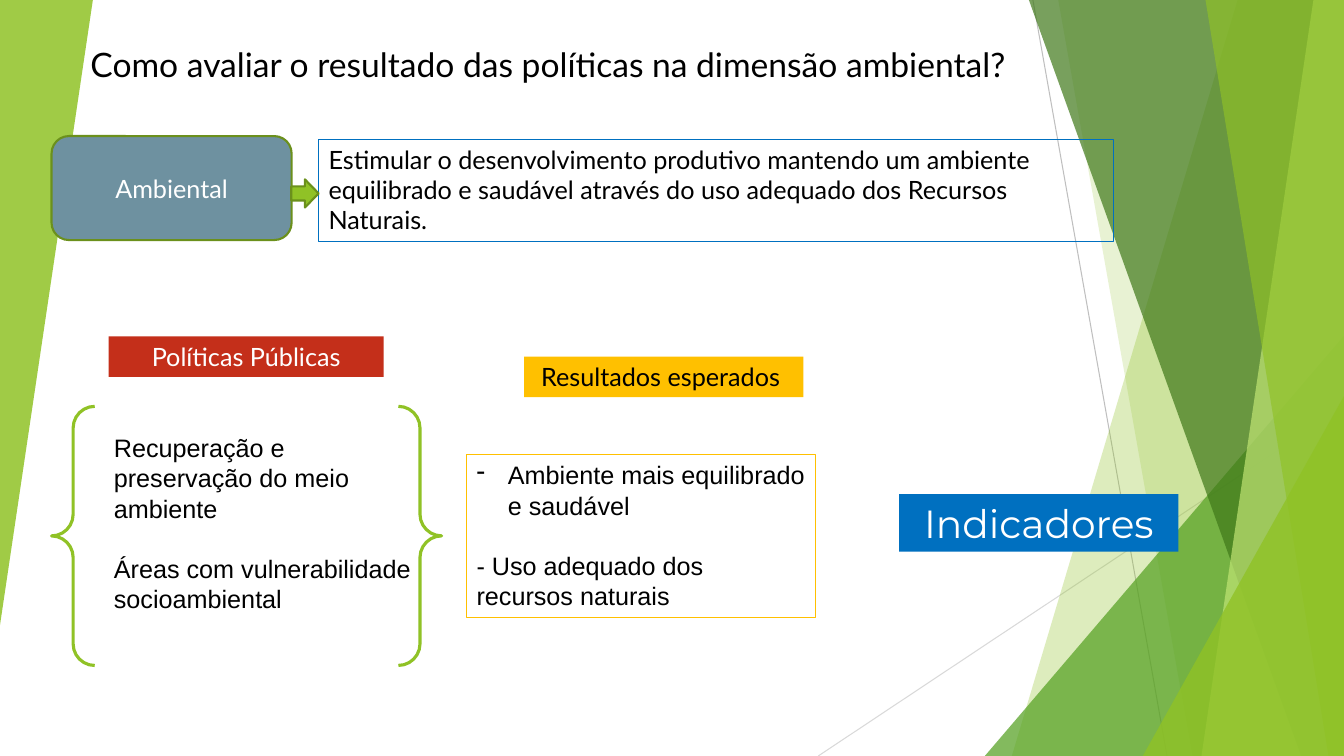
from dataclasses import dataclass

from lxml.etree import SubElement
from pptx import Presentation
from pptx.dml.color import RGBColor
from pptx.enum.shapes import MSO_CONNECTOR, MSO_SHAPE as SHAPE
from pptx.enum.text import MSO_ANCHOR as ANCHOR, PP_ALIGN as ALIGN
from pptx.oxml.ns import qn
from pptx.util import Cm, Pt

WIDTH, HEIGHT = 33.87, 19.05


@dataclass(frozen=True)
class Theme:
    green: str = "90C226"
    leaf: str = "54A021"
    forest: str = "3F7819"
    lime: str = "C0E474"
    olive: str = "6B901C"
    slate: str = "6E91A0"
    red: str = "C42F1A"
    amber: str = "FFC000"
    blue: str = "0070C0"
    grey: str = "BFBFBF"
    pale: str = "D9D9D9"
    black: str = "000000"
    white: str = "FFFFFF"
    body: int = 18
    title: int = 24
    big: int = 28
    lato: str = "Lato"
    arial: str = "Arial"
    montserrat: str = "Montserrat"


class SlideBuilder:
    def __init__(self, slide, theme):
        self.shapes = slide.shapes
        self.theme = theme

    def paint(self, sp, fill=None, alpha=100, line=None, weight=0.75):
        sp.shadow.inherit = False
        if fill:
            sp.fill.solid()
            sp.fill.fore_color.rgb = RGBColor.from_string(fill)
            if alpha < 100:
                color = sp.fill._xPr.find(qn("a:solidFill"))[0]
                SubElement(color, qn("a:alpha"), val=str(alpha * 1000))
        else:
            sp.fill.background()
        if line:
            sp.line.color.rgb = RGBColor.from_string(line)
            sp.line.width = Pt(weight)
        else:
            sp.line.fill.background()
        return sp

    def shape(self, kind, box, **style):
        sp = self.shapes.add_shape(kind, *map(Cm, box))
        return self.paint(sp, **style)

    def triangle(self, box, fill, alpha, rotation=0):
        sp = self.shape(SHAPE.ISOSCELES_TRIANGLE, box, fill=fill, alpha=alpha)
        sp.adjustments[0] = 1
        sp.rotation = rotation

    def band(self, top, bottom, fill, alpha):
        """Fill the area from a slanted left edge to the slide's right edge."""
        builder = self.shapes.build_freeform(Cm(top), 0)
        corners = [(WIDTH, 0), (WIDTH, HEIGHT), (bottom, HEIGHT)]
        builder.add_line_segments([(Cm(x), Cm(y)) for x, y in corners])
        self.paint(builder.convert_to_shape(), fill, alpha)

    def line(self, start, end, color):
        c = self.shapes.add_connector(MSO_CONNECTOR.STRAIGHT, *map(Cm, start + end))
        c.line.color.rgb = RGBColor.from_string(color)
        c.line.width = Pt(0.75)
        SubElement(c._element.spPr, qn("a:effectLst"))

    def text(self, sp, paragraphs, font, size=None, color=None, align=ALIGN.LEFT,
             anchor=ANCHOR.TOP, gap=0):
        tf = sp.text_frame
        for name, value in {"word_wrap": True, "vertical_anchor": anchor}.items():
            setattr(tf, name, value)
        look = {"name": font, "size": Pt(size or self.theme.body)}
        for i, words in enumerate(paragraphs):
            p = tf.add_paragraph() if i else tf.paragraphs[0]
            p.alignment = align
            if i:
                p.space_before = Pt(gap)
            r = p.add_run()
            r.text = words
            for name, value in look.items():
                setattr(r.font, name, value)
            r.font.color.rgb = RGBColor.from_string(color or self.theme.black)
        return tf

    def text_box(self, box, paragraphs, font, **style):
        sp = self.shapes.add_textbox(*map(Cm, box))
        return self.text(sp, paragraphs, font, **style)

    def label(self, box, words, fill, font, **style):
        sp = self.shape(SHAPE.RECTANGLE, box, fill=fill)
        self.text(sp, [words], font, align=ALIGN.CENTER, **style)

    def framed(self, box, paragraphs, line, font, **style):
        sp = self.shape(SHAPE.RECTANGLE, box, line=line)
        return self.text(sp, paragraphs, font, **style)

    def dash(self, p, indent):
        pPr = p._p.get_or_add_pPr()
        pPr.set("marL", str(Cm(indent)))
        pPr.set("indent", str(-Cm(indent)))
        SubElement(pPr, qn("a:buChar"), char="-")


def draw_backdrop(s, t):
    s.line((26.03, 0), (29.41, HEIGHT), t.grey)
    s.line((WIDTH, 10.24), (20.62, HEIGHT), t.pale)
    s.band(31.19, 25.5, t.green, 30)
    s.band(26.67, 30.05, t.green, 20)
    s.triangle((24.82, 8.46, 9.05, 10.59), t.leaf, 72)
    s.band(25.93, 32.79, t.forest, 70)
    s.band(33.1, 30.28, t.lime, 70)
    s.band(30.38, 33.48, t.green, 65)
    s.triangle((28.8, 9.98, 5.07, 9.07), t.green, 80)
    s.triangle((0, 0, 2.34, 15.75), t.green, 85, rotation=180)


def draw_content(s, t):
    s.shape(SHAPE.DOUBLE_BRACE, (1.3, 10.24, 9.83, 6.53), line=t.green, weight=2.25)
    s.label((2.74, 8.48, 6.93, 1.02), "Políticas Públicas", t.red, t.lato, color=t.white)
    s.label((13.21, 8.99, 7.04, 1.02), "Resultados esperados ", t.amber, t.lato)
    s.text_box((2.62, 10.77, 8.1, 4.88),
               ["Recuperação e preservação do meio ambiente",
                "Áreas com vulnerabilidade socioambiental"], t.arial, gap=21.6)

    sp = s.shape(SHAPE.ROUNDED_RECTANGLE, (1.3, 3.43, 6.05, 2.62),
                 fill=t.slate, line=t.olive, weight=1.5)
    s.text(sp, ["Ambiental"], t.lato, color=t.white, align=ALIGN.CENTER,
           anchor=ANCHOR.MIDDLE)
    s.framed((8.03, 3.51, 20.04, 2.57),
             ["Estimular o desenvolvimento produtivo mantendo um ambiente equilibrado "
              "e saudável através do uso adequado dos Recursos Naturais."],
             t.blue, t.lato)
    s.shape(SHAPE.RIGHT_ARROW, (7.34, 4.52, 0.69, 0.71),
            fill=t.green, line=t.olive, weight=1.5)

    tf = s.framed((11.76, 11.46, 8.79, 4.11),
                  ["Ambiente mais equilibrado e saudável",
                   "- Uso adequado dos recursos naturais"], t.amber, t.arial, gap=21.6)
    s.dash(tf.paragraphs[0], 0.79)

    s.text_box((2.03, 0.99, 24.59, 1.27),
               ["Como avaliar o resultado das políticas na dimensão ambiental?"],
               t.lato, size=t.title, align=ALIGN.JUSTIFY)
    s.label((22.66, 12.45, 7.04, 1.45), "Indicadores", t.blue, t.montserrat,
            size=t.big, color=t.white)


def main():
    prs = Presentation()
    prs.slide_width, prs.slide_height = Cm(WIDTH), Cm(HEIGHT)
    theme = Theme()
    s = SlideBuilder(prs.slides.add_slide(prs.slide_layouts[6]), theme)
    draw_backdrop(s, theme)
    draw_content(s, theme)
    prs.save("out.pptx")


if __name__ == "__main__":
    main()
